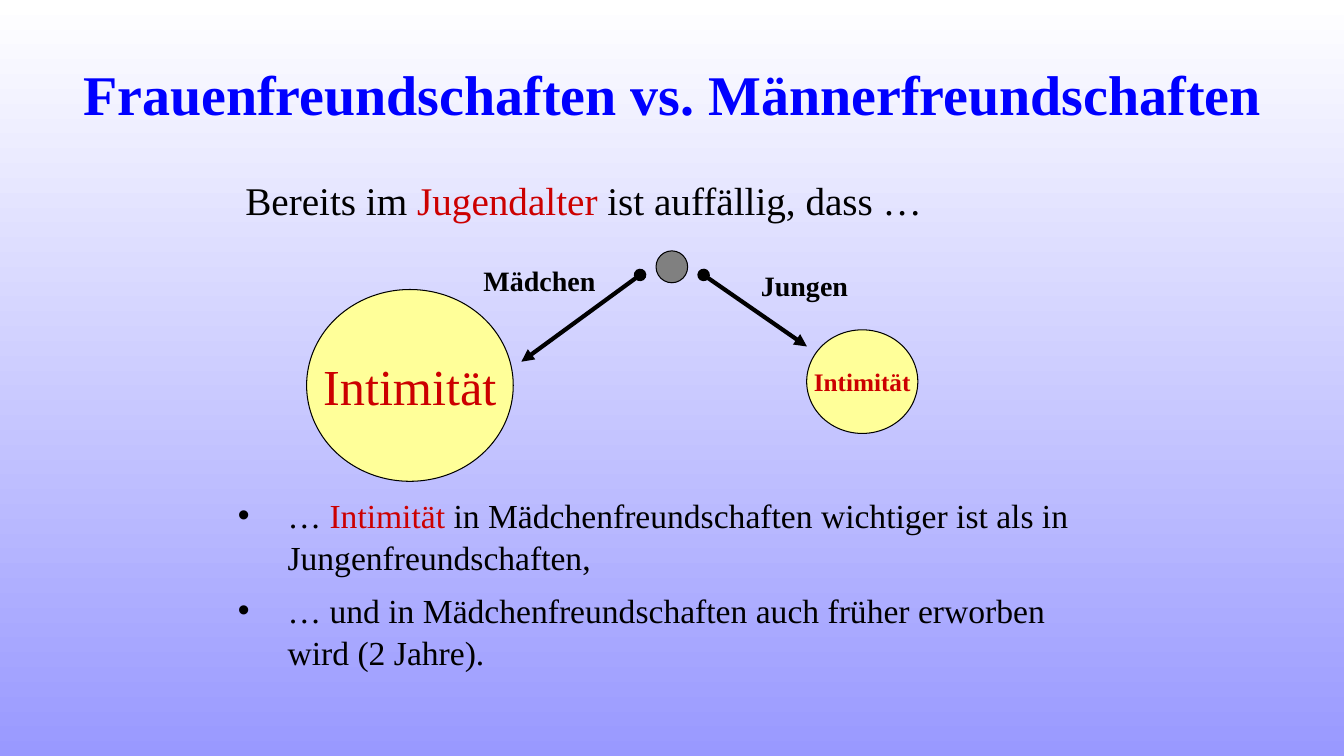
from lxml.etree import SubElement
from pptx import Presentation
from pptx.dml.color import RGBColor
from pptx.enum.shapes import MSO_CONNECTOR, MSO_SHAPE
from pptx.enum.text import MSO_ANCHOR, MSO_AUTO_SIZE, PP_ALIGN
from pptx.oxml.ns import qn
from pptx.util import Pt

WHITE = RGBColor(0xFF, 0xFF, 0xFF)
LAVENDER = RGBColor(0x99, 0x99, 0xFF)
BLUE = RGBColor(0x00, 0x00, 0xFF)
RED = RGBColor(0xCC, 0x00, 0x00)
BLACK = RGBColor(0x00, 0x00, 0x00)
GREY = RGBColor(0x80, 0x80, 0x80)
YELLOW = RGBColor(0xFF, 0xFF, 0x99)


class FriendshipSlide:
    """Hold the shared style and the slide, and add each kind of element."""

    font_name = "Times New Roman"

    def __init__(self, presentation):
        self.slide = presentation.slides.add_slide(presentation.slide_layouts[1])
        fill = self.slide.background.fill
        fill.gradient()
        fill.gradient_angle = 270
        for stop, color, position in zip(fill.gradient_stops, (WHITE, LAVENDER), (0, 1)):
            stop.color.rgb = color
            stop.position = position

    def place(self, shape, box):
        shape.left, shape.top, shape.width, shape.height = map(Pt, box)

    def add_runs(self, paragraph, parts, size, bold=False):
        for text, color in parts:
            run = paragraph.add_run()
            run.text = text
            run.font.name = self.font_name
            run.font.size = Pt(size)
            run.font.bold = bold
            run.font.color.rgb = color

    def title(self, text, box):
        title = self.slide.shapes.title
        self.place(title, box)
        frame = title.text_frame
        frame.auto_size = MSO_AUTO_SIZE.NONE
        frame.vertical_anchor = MSO_ANCHOR.MIDDLE
        frame.paragraphs[0].alignment = PP_ALIGN.CENTER
        self.add_runs(frame.paragraphs[0], [(text, BLUE)], 40, True)

    def bullets(self, items, box):
        body = self.slide.placeholders[1]
        self.place(body, box)
        frame = body.text_frame
        frame.auto_size = MSO_AUTO_SIZE.NONE
        for index, parts in enumerate(items):
            paragraph = frame.add_paragraph() if index else frame.paragraphs[0]
            properties = paragraph._p.get_or_add_pPr()
            properties.set("marL", str(Pt(35.5)))
            properties.set("indent", str(Pt(-35.5)))
            SubElement(properties, qn("a:buChar")).set("char", "•")
            paragraph.line_spacing = 1.05
            paragraph.space_before = Pt(0)
            paragraph.space_after = Pt(7.2)
            self.add_runs(paragraph, parts, 24)

    def text(self, parts, box, size, bold=False):
        frame = self.slide.shapes.add_textbox(*map(Pt, box)).text_frame
        frame.word_wrap = True
        self.add_runs(frame.paragraphs[0], parts, size, bold)

    def circle(self, box, color, label="", size=18, bold=False):
        circle = self.slide.shapes.add_shape(MSO_SHAPE.OVAL, *map(Pt, box))
        circle.shadow.inherit = False
        circle.fill.solid()
        circle.fill.fore_color.rgb = color
        circle.line.color.rgb = BLACK
        circle.line.width = Pt(0.75)
        if label:
            frame = circle.text_frame
            frame.word_wrap = False
            frame.vertical_anchor = MSO_ANCHOR.MIDDLE
            frame.paragraphs[0].alignment = PP_ALIGN.CENTER
            self.add_runs(frame.paragraphs[0], [(label, RED)], size, bold)

    def arrow(self, start, end):
        arrow = self.slide.shapes.add_connector(
            MSO_CONNECTOR.STRAIGHT, *map(Pt, start + end))
        arrow.line.color.rgb = BLACK
        arrow.line.width = Pt(3)
        line = arrow.line._get_or_add_ln()
        SubElement(line, qn("a:headEnd")).set("type", "oval")
        SubElement(line, qn("a:tailEnd")).set("type", "triangle")
        SubElement(arrow._element.spPr, qn("a:effectLst"))


def main():
    presentation = Presentation()
    presentation.slide_width = Pt(960)
    presentation.slide_height = Pt(540)
    page = FriendshipSlide(presentation)
    page.title("Frauenfreundschaften vs. Männerfreundschaften", (48, 21.6, 864, 90))
    page.circle((468.6, 179.2, 22.6, 22.8), GREY)
    page.arrow((457.2, 196.4), (372.4, 258.4))
    page.arrow((502.6, 196.4), (576.4, 247.5))
    page.bullets([
        [("… ", BLACK), ("Intimität", RED),
         (" in Mädchenfreundschaften wichtiger ist als in Jungenfreundschaften,", BLACK)],
        [("… und in Mädchenfreundschaften auch früher erworben wird (2 Jahre).", BLACK)],
    ], (162.7, 348.5, 635, 132.5))
    page.text([("Bereits im ", BLACK), ("Jugendalter", RED),
               (" ist auffällig, dass …", BLACK)], (168.2, 122.4, 504.7, 41), 28)
    page.circle((219, 206.8, 147.6, 137), YELLOW, "Intimität", 36)
    page.circle((576.2, 235.6, 79.4, 74), YELLOW, "Intimität", 18, True)
    page.text([("Mädchen", BLACK)], (338.2, 185, 96.5, 31), 20, True)
    page.text([("Jungen", BLACK)], (536.4, 188, 96.5, 31), 20, True)
    presentation.save("out.pptx")


if __name__ == "__main__":
    main()
